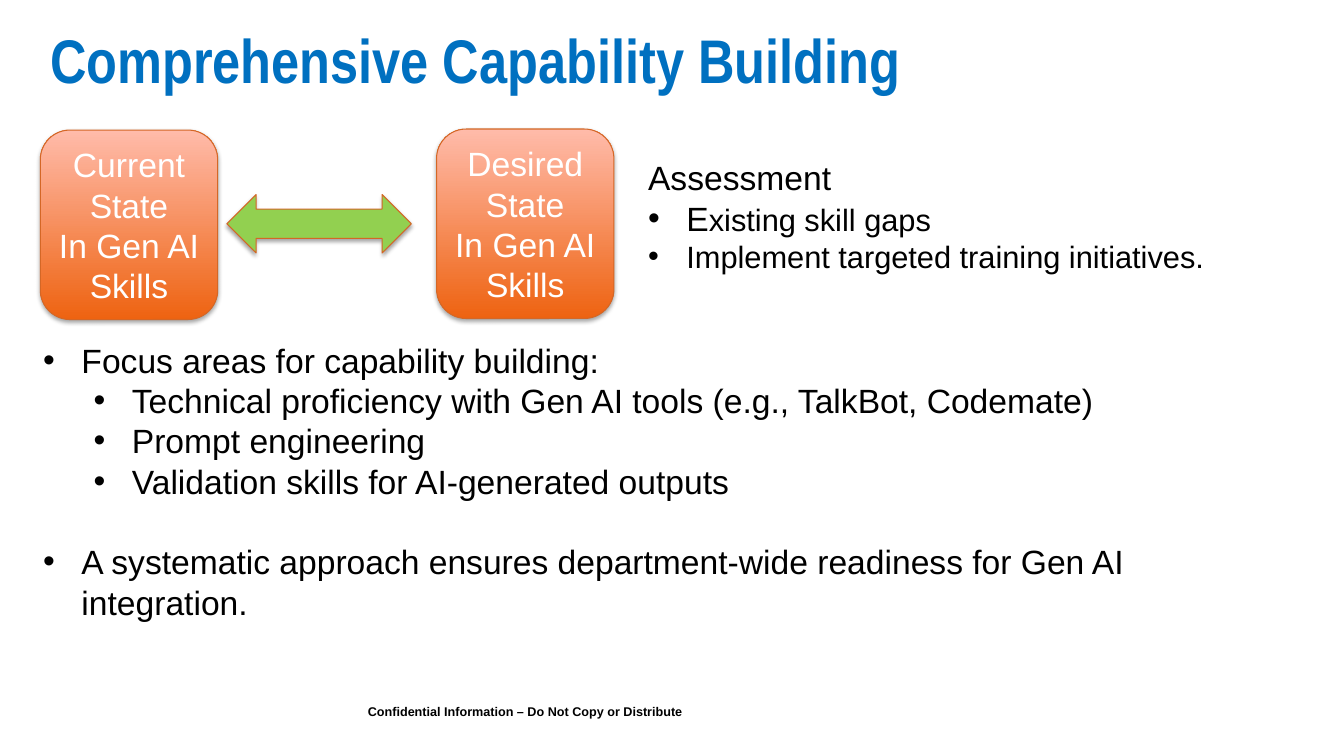
from lxml import etree
from pptx import Presentation
from pptx.dml.color import RGBColor
from pptx.enum.shapes import MSO_SHAPE
from pptx.enum.text import MSO_ANCHOR, PP_ALIGN
from pptx.oxml.ns import qn
from pptx.util import Inches, Pt

ROUNDED, DOUBLE_ARROW = MSO_SHAPE.ROUNDED_RECTANGLE, MSO_SHAPE.LEFT_RIGHT_ARROW
MIDDLE, CENTER = MSO_ANCHOR.MIDDLE, PP_ALIGN.CENTER

BLACK = RGBColor(0x00, 0x00, 0x00)
WHITE = RGBColor(0xFF, 0xFF, 0xFF)
BLUE = RGBColor(0x00, 0x70, 0xC0)
GREEN = RGBColor(0x92, 0xD0, 0x50)
ORANGE = RGBColor(0xEE, 0x63, 0x11)
PEACH = RGBColor(0xFF, 0xBB, 0xAA)
RUST = RGBColor(0xD4, 0x67, 0x26)

# Paragraphs are (text, bullet level or None, size)
TITLE = [("Comprehensive Capability Building", None, 44)]
FOOTER = [("Confidential Information – Do Not Copy or Distribute", None, 9)]
ASSESSMENT = [
    ("Assessment", None, 24),
    ("Existing skill gaps", 0, 22),
    ("Implement targeted training initiatives.", 0, 22),
]
FOCUS = [
    ("Focus areas for capability building:", 0, 24),
    ("Technical proficiency with Gen AI tools (e.g., TalkBot, Codemate)", 1, 24),
    ("Prompt engineering", 1, 24),
    ("Validation skills for AI-generated outputs", 1, 24),
    ("A systematic approach ensures department-wide readiness for Gen AI integration.", 0, 24),
]
# State boxes: (left, top, name)
STATES = [(0.4, 1.29, "Current State"), (4.33, 1.28, "Desired State")]
STATE_WIDTH, STATE_HEIGHT = 1.76, 1.88
BULLET_INDENT, LEVEL_STEP = 0.38, 0.5
LINE_HEIGHT = 1.2


def add_bullet(para, level):
    properties = para._p.get_or_add_pPr()
    properties.set("marL", str(Inches(BULLET_INDENT + level * LEVEL_STEP)))
    properties.set("indent", str(-Inches(BULLET_INDENT)))
    etree.SubElement(properties, qn("a:buFont")).set("typeface", "Arial")
    etree.SubElement(properties, qn("a:buChar")).set("char", "•")


def style(font, size, color, name="Arial", bold=False):
    font.name, font.size, font.bold = name, Pt(size), bold
    font.color.rgb = color


def add_text(page, area, paragraphs, color=BLACK, name="Arial", bold=False):
    box = page.shapes.add_textbox(*map(Inches, area))
    frame = box.text_frame
    frame.word_wrap = True
    frame.text = "\n".join(text for text, _, _ in paragraphs)
    for para, (_, level, size) in zip(frame.paragraphs, paragraphs):
        if level is not None:
            para.level = level
            add_bullet(para, level)
        for span in para.runs:
            style(span.font, size, color, name, bold)
    return frame


def add_shadowed(page, kind, area):
    """Add a rust-outlined shape with a soft shadow just below it."""
    shape = page.shapes.add_shape(kind, *map(Inches, area))
    shape.line.color.rgb = RUST
    shape.line.width = Pt(0.75)
    shape.shadow.inherit = False
    effects = shape._element.spPr.find(qn("a:effectLst"))
    shadow = etree.SubElement(effects, qn("a:outerShdw"), blurRad=str(Pt(3.1)),
                              dist=str(Pt(1.8)), dir="5400000", rotWithShape="0")
    tint = etree.SubElement(shadow, qn("a:srgbClr"), val=str(BLACK))
    etree.SubElement(tint, qn("a:alpha"), val="35000")
    return shape


def add_state(page, left, top, name):
    shape = add_shadowed(page, ROUNDED, (left, top, STATE_WIDTH, STATE_HEIGHT))
    shape.fill.gradient()
    shape.fill.gradient_angle = 90
    for stop, color in zip(shape.fill.gradient_stops, (ORANGE, PEACH)):
        stop.color.rgb = color
    frame = shape.text_frame
    frame.word_wrap = True
    frame.vertical_anchor = MIDDLE
    frame.text = f"{name}\nIn Gen AI Skills"
    for para in frame.paragraphs:
        para.alignment = CENTER
        for span in para.runs:
            style(span.font, 24, WHITE)


def main():
    deck = Presentation()
    deck.slide_width, deck.slide_height = Inches(13.33), Inches(7.5)
    page = deck.slides.add_slide(deck.slide_layouts[6])

    add_text(page, (3.55, 6.93, 6.45, 0.25), FOOTER, bold=True)
    add_text(page, (0.4, 0.17, 12.53, 0.85), TITLE, BLUE, "Arial Narrow", True)
    focus = add_text(page, (0.33, 3.32, 12.25, 3.33), FOCUS)
    focus.paragraphs[-1].space_before = Pt(24 * LINE_HEIGHT)
    for state in STATES:
        add_state(page, *state)
    arrow = add_shadowed(page, DOUBLE_ARROW, (2.25, 1.93, 1.83, 0.58))
    arrow.fill.solid()
    arrow.fill.fore_color.rgb = GREEN
    assessment = add_text(page, (6.33, 1.51, 6.7, 1.3), ASSESSMENT)
    first_bullet = assessment.paragraphs[1]
    first_letter, rest = first_bullet.runs[0], first_bullet.add_run()
    first_letter.text, rest.text = first_letter.text[:1], first_letter.text[1:]
    style(first_letter.font, 24, BLACK)
    style(rest.font, 22, BLACK)

    deck.save("out.pptx")


if __name__ == "__main__":
    main()
